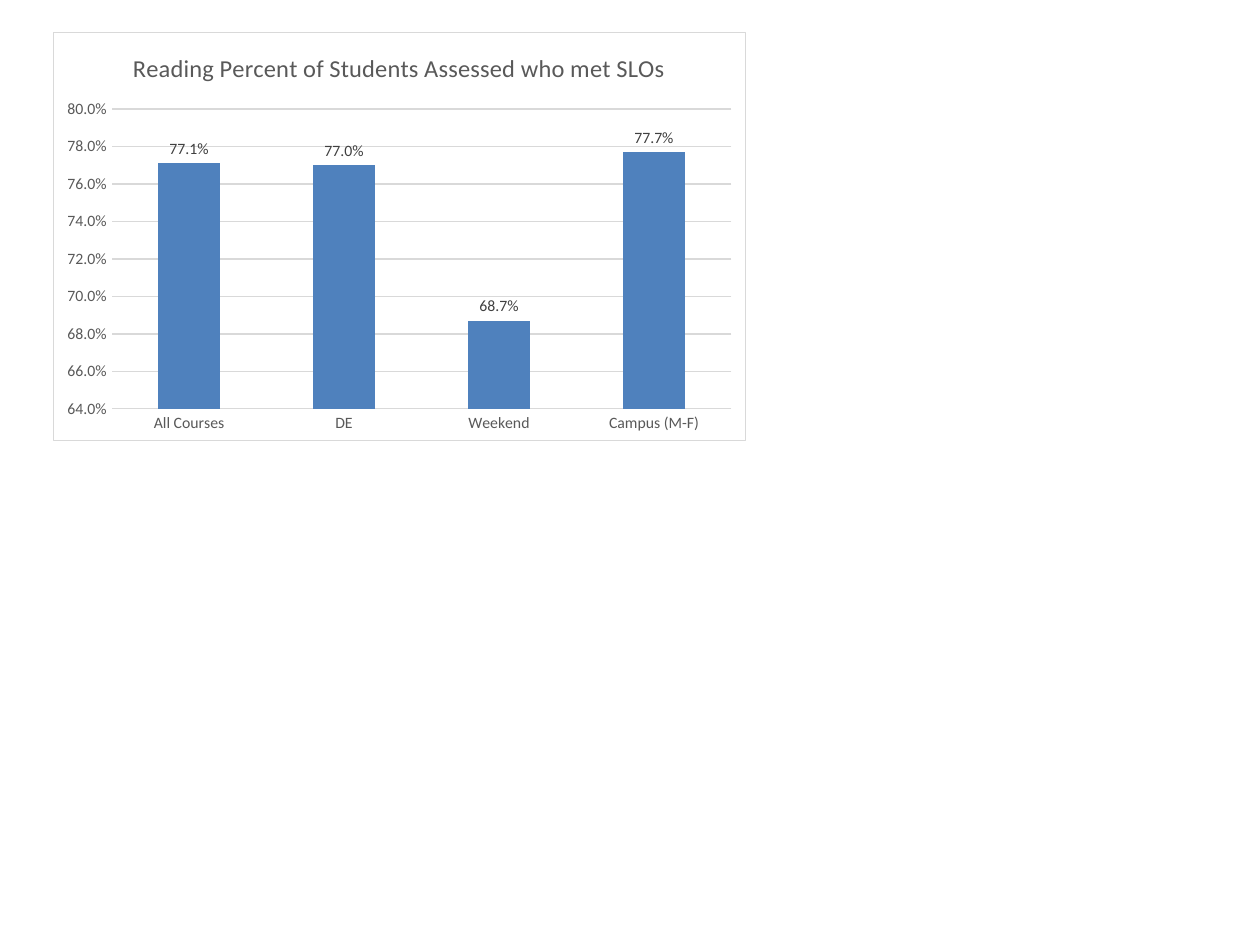
"""Build a slide with a column chart of reading SLO results."""
from lxml import etree
from pptx import Presentation
from pptx.chart.data import CategoryChartData
from pptx.dml.color import RGBColor
from pptx.enum.chart import XL_CHART_TYPE, XL_LABEL_POSITION, XL_TICK_MARK
from pptx.oxml import parse_xml
from pptx.util import Inches, Pt

COLUMNS = XL_CHART_TYPE.COLUMN_CLUSTERED
OUTSIDE = XL_LABEL_POSITION.OUTSIDE_END
NO_TICK = XL_TICK_MARK.NONE

TITLE = "Reading Percent of Students Assessed who met SLOs"
RESULTS = {"All Courses": 0.771, "DE": 0.77, "Weekend": 0.687, "Campus (M-F)": 0.777}
PERCENT = "0.0%"
FONT = "Calibri"
GREY = "595959"
RULE = "D9D9D9"
NAMESPACES = (
    'xmlns:c="http://schemas.openxmlformats.org/drawingml/2006/chart" '
    'xmlns:a="http://schemas.openxmlformats.org/drawingml/2006/main"'
)
FRAME = f"""<c:spPr {NAMESPACES}>
  <a:solidFill><a:srgbClr val="FFFFFF"/></a:solidFill>
  <a:ln w="{Pt(0.75)}"><a:solidFill><a:srgbClr val="{RULE}"/></a:solidFill></a:ln>
</c:spPr>"""


def color(value):
    return RGBColor.from_string(value)


def style_font(font, size, value):
    font.name = FONT
    font.size = Pt(size)
    font.bold = False
    font.color.rgb = color(value)


def style_axis(axis):
    axis.major_tick_mark = axis.minor_tick_mark = NO_TICK
    axis.format.line.fill.background()
    style_font(axis.tick_labels.font, 9, GREY)


def add_title(chart):
    chart.has_title = True
    para = chart.chart_title.text_frame.paragraphs[0]
    span = para.add_run()
    span.text = TITLE
    style_font(span.font, 14, GREY)
    chart.chart_title.include_in_layout = False


def add_results_chart(slide):
    data = CategoryChartData(number_format=PERCENT)
    data.categories = list(RESULTS)
    data.add_series("Series 1", list(RESULTS.values()))
    chart = slide.shapes.add_chart(
        COLUMNS, Inches(0.42), Inches(0.25), Inches(5.5), Inches(3.25), data
    ).chart
    style_font(chart.font, 10, "000000")
    chart.has_legend = False
    add_title(chart)

    style_axis(chart.category_axis)
    values = chart.value_axis
    style_axis(values)
    values.minimum_scale, values.maximum_scale, values.major_unit = 0.64, 0.8, 0.02
    values.tick_labels.number_format = PERCENT
    values.tick_labels.number_format_is_linked = False
    values.has_major_gridlines = True
    grid = values.major_gridlines.format.line
    grid.color.rgb = color(RULE)
    grid.width = Pt(0.75)

    plot = chart.plots[0]
    plot.gap_width = 150
    plot.vary_by_categories = False
    fill = plot.series[0].format.fill
    fill.solid()
    fill.fore_color.rgb = color("4F81BD")
    plot.has_data_labels = True
    labels = plot.data_labels
    labels.show_value = True
    labels.position = OUTSIDE
    labels.number_format = PERCENT
    labels.number_format_is_linked = False
    style_font(labels.font, 9, "404040")

    root = chart.element
    chart_part = root.find(etree.QName(root.nsmap["c"], "chart").text)
    chart_part.addnext(parse_xml(FRAME))


def main():
    deck = Presentation()
    deck.slide_width, deck.slide_height = Inches(10), Inches(7.5)
    slide = deck.slides.add_slide(deck.slide_layouts[6])
    add_results_chart(slide)
    deck.save("out.pptx")


if __name__ == "__main__":
    main()
